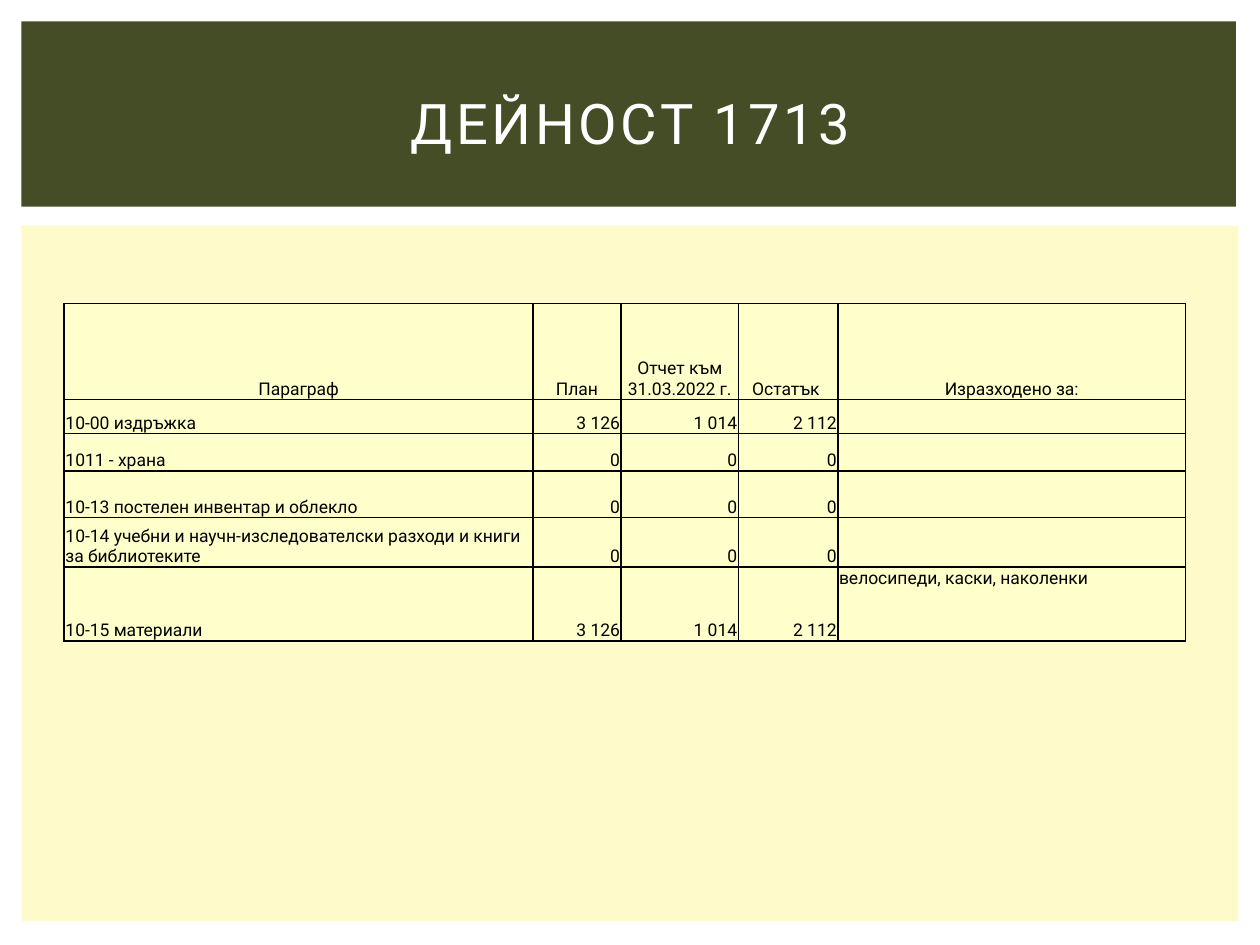
import pptx
import pptx.util
import pptx.dml.color
import pptx.enum.shapes
import pptx.enum.text
import pptx.oxml
import pptx.oxml.ns

Inches = pptx.util.Inches
Align = pptx.enum.text.PP_ALIGN
Anchor = pptx.enum.text.MSO_ANCHOR
WHITE = pptx.dml.color.RGBColor(0xFF, 0xFF, 0xFF)
BLACK = pptx.dml.color.RGBColor(0x00, 0x00, 0x00)
OLIVE = pptx.dml.color.RGBColor(0x44, 0x4D, 0x26)
CREAM = pptx.dml.color.RGBColor(0xFE, 0xFA, 0xC9)
CELL_YELLOW = pptx.dml.color.RGBColor(0xFF, 0xFF, 0xCC)


def write_text(frame, text, size=10, color=BLACK, align=Align.LEFT, spacing=0):
    para = frame.paragraphs[0]
    para.alignment = align
    if not text:
        end = pptx.oxml.ns.qn("a:endParaRPr")
        para._p.makeelement(end)
        para._p.append(para._p.makeelement(end, {"sz": str(size * 100)}))
        return
    span = para.add_run()
    span.text = text
    span.font.name = "Roboto"
    span.font.size = pptx.util.Pt(size)
    span.font.color.rgb = color
    if spacing:
        span.font._element.set("spc", str(spacing * 100))


deck = pptx.Presentation()
deck.slide_width = Inches(10)
deck.slide_height = Inches(7.5)
page = deck.slides.add_slide(deck.slide_layouts[6])
page.background.fill.solid()
page.background.fill.fore_color.rgb = WHITE

for top, width, height, color in [(1.79, 9.66, 5.52, CREAM), (0.17, 9.64, 1.47, OLIVE)]:
    panel = page.shapes.add_shape(
        pptx.enum.shapes.MSO_SHAPE.RECTANGLE,
        Inches(0.17), Inches(top), Inches(width), Inches(height))
    panel.shadow.inherit = False
    panel.fill.solid()
    panel.fill.fore_color.rgb = color
    panel.line.fill.background()

title = page.shapes.add_textbox(Inches(0.42), Inches(0.39), Inches(9.17), Inches(1.15))
title.text_frame.word_wrap = True
title.text_frame.vertical_anchor = Anchor.MIDDLE
write_text(title.text_frame, "ДЕЙНОСТ 1713", size=32, color=WHITE, align=Align.CENTER, spacing=2)

column_widths = [3.72, 0.7, 0.93, 0.79, 2.76]
row_heights = [0.76, 0.27, 0.3, 0.37, 0.39, 0.59]
budget_rows = [
    ["Параграф", "План", "Отчет към 31.03.2022 г.", "Остатък ", "Изразходено за:"],
    ["10-00 издръжка", "3 126", "1 014", "2 112", ""],
    ["1011 - храна", "0", "0", "0", ""],
    ["10-13 постелен инвентар и облекло", "0", "0", "0", ""],
    ["10-14 учебни и научн-изследователски разходи и книги за библиотеките", "0", "0", "0", ""],
    ["10-15 материали", "3 126", "1 014", "2 112", "велосипеди, каски, наколенки"],
]
column_aligns = [Align.LEFT, Align.RIGHT, Align.RIGHT, Align.RIGHT, Align.LEFT]

budget = page.shapes.add_table(
    len(row_heights), len(column_widths), Inches(0.51), Inches(2.41),
    Inches(sum(column_widths)), Inches(sum(row_heights))).table
for column, width in zip(budget.columns, column_widths):
    column.width = Inches(width)
for row, height in zip(budget.rows, row_heights):
    row.height = Inches(height)

for row_index, texts in enumerate(budget_rows):
    for column_index, text in enumerate(texts):
        cell = budget.cell(row_index, column_index)
        cell.margin_left = cell.margin_right = cell.margin_top = Inches(0.01)
        cell.margin_bottom = 0
        is_note = row_index > 0 and column_index == 4
        cell.vertical_anchor = Anchor.TOP if is_note else Anchor.BOTTOM
        align = column_aligns[column_index] if row_index else Align.CENTER
        write_text(cell.text_frame, text, align=align)
        properties = cell._tc.get_or_add_tcPr()
        for side in ("lnL", "lnR", "lnT", "lnB"):
            properties.append(pptx.oxml.parse_xml(
                f'<a:{side} {pptx.oxml.ns.nsdecls("a")} w="12700"><a:solidFill>'
                f'<a:srgbClr val="{BLACK}"/></a:solidFill></a:{side}>'))
        cell.fill.solid()
        cell.fill.fore_color.rgb = CELL_YELLOW

deck.save("out.pptx")
